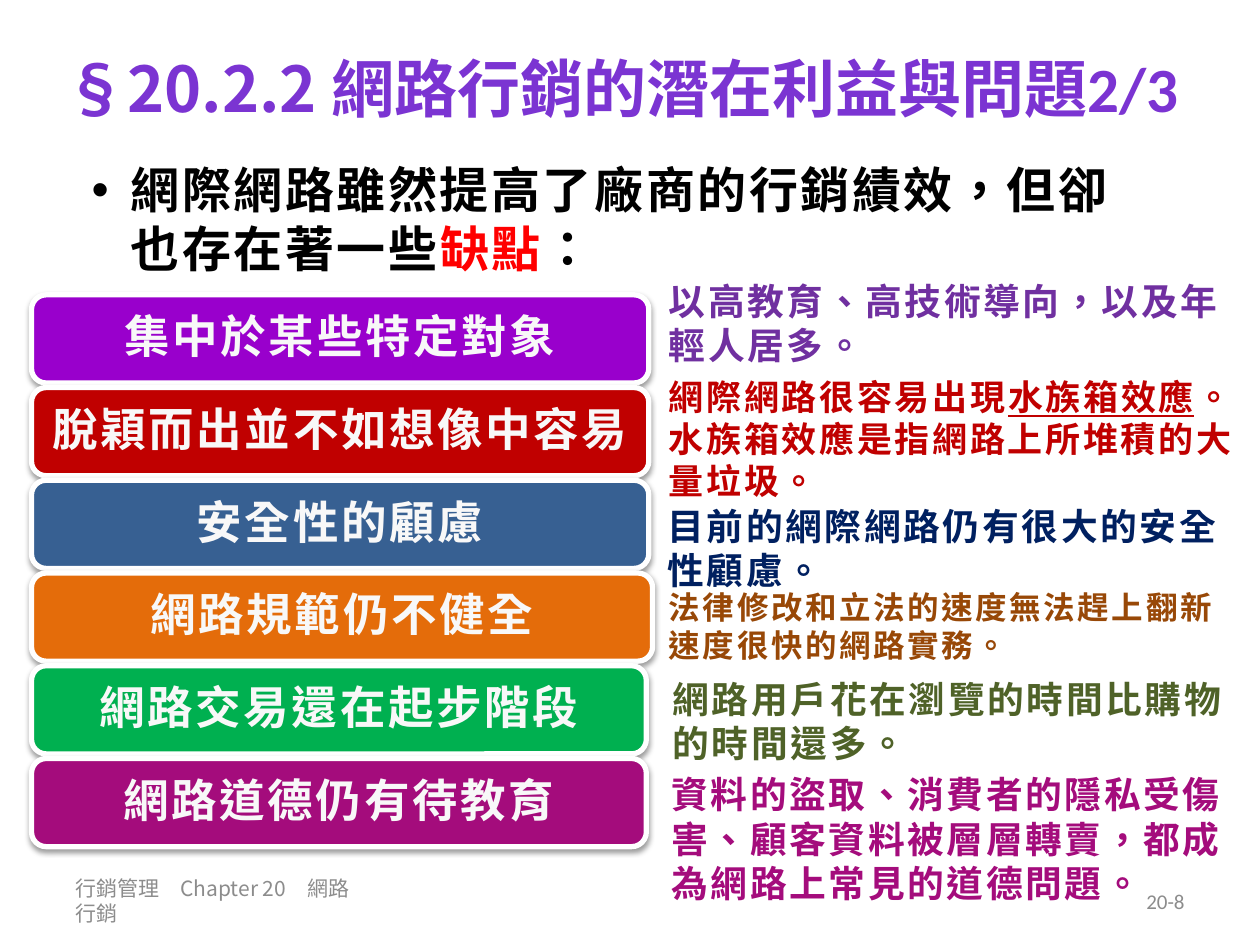
"""Build the slide on the drawbacks of internet marketing."""
from lxml import etree
from pptx import Presentation
from pptx.dml.color import RGBColor
from pptx.enum.shapes import MSO_SHAPE
from pptx.enum.text import MSO_ANCHOR, PP_ALIGN
from pptx.oxml.ns import qn
from pptx.util import Inches, Pt

ROUND = MSO_SHAPE.ROUNDED_RECTANGLE
TOP, MID = MSO_ANCHOR.TOP, MSO_ANCHOR.MIDDLE
LEFT, CENTER, RIGHT = PP_ALIGN.LEFT, PP_ALIGN.CENTER, PP_ALIGN.RIGHT
SANS, CJK = "Calibri", "Noto Sans CJK SC"

WHITE = RGBColor(0xFF, 0xFF, 0xFF)
PALE = RGBColor(0xF8, 0xF8, 0xF8)
BLACK = RGBColor(0, 0, 0)
GRAY = RGBColor(0x8C, 0x8C, 0x8C)
RED = RGBColor(0xFF, 0, 0)
VIOLET = RGBColor(0x7B, 0x34, 0xD2)
PURPLE = RGBColor(0x99, 0, 0xCC)
PLUM = RGBColor(0x70, 0x30, 0xA0)
CRIMSON = RGBColor(0xC0, 0, 0)
BLUE = RGBColor(0x37, 0x60, 0x92)
NAVY = RGBColor(0, 0x20, 0x60)
ORANGE = RGBColor(0xE4, 0x6C, 0x0A)
BROWN = RGBColor(0x98, 0x48, 0x07)
GREEN = RGBColor(0, 0xB0, 0x50)
OLIVE = RGBColor(0x4F, 0x62, 0x28)
MAGENTA = RGBColor(0xA4, 0x0C, 0x7C)


def write(shape, runs, size, color, bold=True, gap=1.5, align=LEFT,
          anchor=TOP, bullet=False, lead=None):
    """Fill a shape with one paragraph of (text, overrides) runs."""
    frame = shape.text_frame
    frame.word_wrap = True
    frame.vertical_anchor = anchor
    para = frame.paragraphs[0]
    para.alignment = align
    if lead:
        para.line_spacing = lead
    if bullet:
        props = para._p.get_or_add_pPr()
        props.set("marL", str(Inches(0.31)))
        props.set("indent", str(Inches(-0.31)))
        etree.SubElement(props, qn("a:buFont")).set("typeface", "Arial")
        etree.SubElement(props, qn("a:buChar")).set("char", "•")
    for text, style in runs:
        run = para.add_run()
        run.text = text
        font = run.font
        font.name = style.get("name", SANS)
        font.size = Pt(size)
        font.bold = bold
        font.underline = style.get("line")
        font.color.rgb = style.get("color", color)
        props = run._r.get_or_add_rPr()
        props.set("lang", "zh-TW")
        props.set("spc", str(int(gap * 100)))


def shade(shape):
    """Give a shape a soft shadow below it."""
    shape.shadow.inherit = False
    glow = shape._element.spPr.find(qn("a:effectLst"))
    outer = etree.SubElement(glow, qn("a:outerShdw"), blurRad=str(Pt(3.1)),
                             dist=str(Pt(1.6)), dir="5400000", rotWithShape="0")
    tint = etree.SubElement(outer, qn("a:srgbClr"), val="000000")
    etree.SubElement(tint, qn("a:alpha"), val="38000")


deck = Presentation()
deck.slide_width, deck.slide_height = Inches(10), Inches(7.5)
slide = deck.slides.add_slide(deck.slide_layouts[6])
shapes = slide.shapes

foot = shapes.add_textbox(Inches(0.5), Inches(6.95), Inches(2.45), Inches(0.4))
write(foot, [("行銷管理　Chapter 20　網路行銷", {"name": CJK})], 12, GRAY,
      bold=False, gap=0, anchor=MID)
page = shapes.add_textbox(Inches(7.17), Inches(6.95), Inches(2.33), Inches(0.4))
write(page, [("20-8", {})], 12, GRAY, bold=False, gap=0, align=RIGHT, anchor=MID)

title = shapes.add_textbox(Inches(0.35), 0, Inches(9.16), Inches(1.38))
write(title, [("§20.2.2 ", {"name": CJK}), ("網路行銷的潛在利益與問題2/3", {})],
      36, VIOLET, gap=0, align=CENTER, anchor=MID)
intro = shapes.add_textbox(Inches(0.63), Inches(1.22), Inches(8.43), Inches(1.04))
write(intro, [("網際網路雖然提高了廠商的行銷績效，但卻也存在著一些", {}),
              ("缺點", {"color": RED}), ("：", {})], 28, BLACK, bullet=True)

bars = [
    ("集中於某些特定對象", PURPLE, 4.9),
    ("脫穎而出並不如想像中容易", CRIMSON, 4.9),
    ("安全性的顧慮", BLUE, 4.9),
    ("網路規範仍不健全", ORANGE, 4.93),
    ("網路交易還在起步階段", GREEN, 4.88),
    ("網路道德仍有待教育", MAGENTA, 4.88),
]
for row, (label, fill, width) in enumerate(bars):
    bar = shapes.add_shape(ROUND, Inches(0.25), Inches(2.34 + 0.736 * row),
                           Inches(width), Inches(0.7))
    bar.fill.solid()
    bar.fill.fore_color.rgb = fill
    bar.line.color.rgb = WHITE
    bar.line.width = Pt(3)
    shade(bar)
    write(bar, [(label, {})], 26, PALE, align=CENTER, anchor=MID, lead=0.9)

notes = [
    (5.21, 2.16, 4.77, 0.81, 21, PLUM,
     [("以高教育、高技術導向，以及年輕人居多。", {})]),
    (5.21, 2.93, 4.77, 1.11, 20, CRIMSON,
     [("網際網路很容易出現", {}), ("水族箱效應", {"line": True}),
      ("。水族箱效應是指網路上所堆積的大量垃圾。", {})]),
    (5.2, 3.95, 4.77, 0.81, 21, NAVY,
     [("目前的網際網路仍有很大的安全性顧慮。", {})]),
    (5.21, 4.62, 4.75, 0.71, 18, BROWN,
     [("法律修改和立法的速度無法趕上翻新速度很快的網路實務。", {})]),
    (5.24, 5.32, 4.72, 0.81, 21, OLIVE,
     [("網路用戶花在瀏覽的時間比購物的時間還多。", {})]),
    (5.23, 6.08, 4.72, 1.16, 21, MAGENTA,
     [("資料的盜取、消費者的隱私受傷害、顧客資料被層層轉賣，"
       "都成為網路上常見的道德問題。", {})]),
]
for left, top, width, height, size, color, runs in notes:
    note = shapes.add_textbox(Inches(left), Inches(top), Inches(width), Inches(height))
    write(note, runs, size, color)

deck.save("out.pptx")
